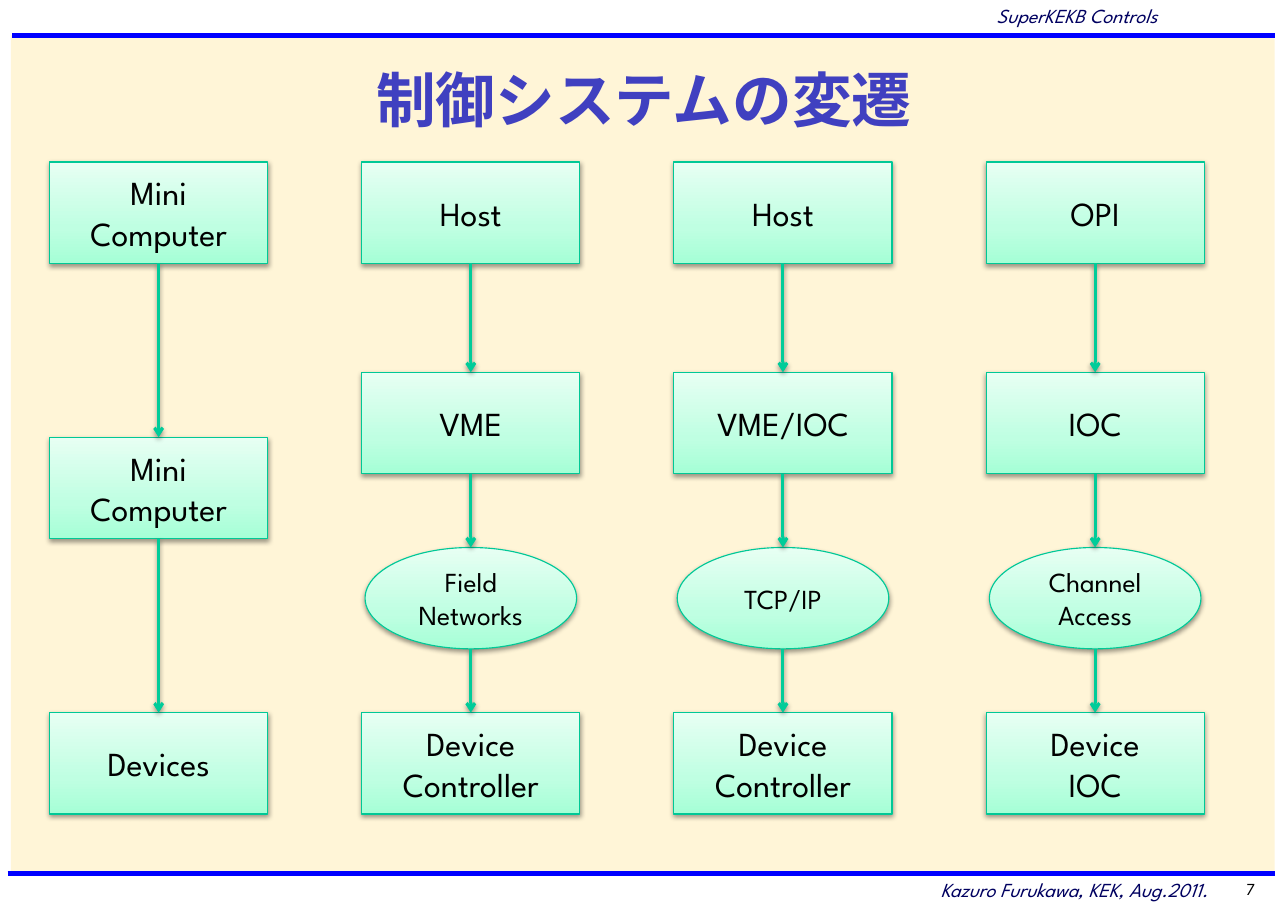
from dataclasses import dataclass
from itertools import pairwise

from pptx import Presentation, oxml
from pptx import util as u
from pptx.dml import color
from pptx.enum import lang, shapes, text
from pptx.oxml import ns


@dataclass(frozen=True)
class Theme:
    face: str = "League Spartan"
    paper: str = "FFF5D7"
    rule: str = "0000FF"
    note: str = "000060"
    title: str = "4040C0"
    ink: str = "000000"
    edge: str = "00C896"
    arrow: str = "00CC99"
    fade: tuple = ((0, "A5FFD6"), (35, "BFFFE2"), (100, "E7FFF3"))
    big: int = 39
    node: int = 22
    oval: int = 18
    small: int = 13
    page: int = 11


T = Theme()
BOX, OVAL = shapes.MSO_SHAPE.RECTANGLE, shapes.MSO_SHAPE.OVAL
LEFT, CENTER, RIGHT = (text.PP_ALIGN.LEFT, text.PP_ALIGN.CENTER,
                       text.PP_ALIGN.RIGHT)
TOP, MID = text.MSO_ANCHOR.TOP, text.MSO_ANCHOR.MIDDLE

# Each column: rows of (top, kind, label)
FLOWS = [
    [(1.47, BOX, "Mini Computer"), (3.97, BOX, "Mini Computer"),
     (6.47, BOX, "Devices")],
] + [
    [(1.47, BOX, host), (3.38, BOX, front), (4.97, OVAL, net),
     (6.47, BOX, end)]
    for host, front, net, end in [
        ("Host", "VME", "Field\nNetworks", "Device Controller"),
        ("Host", "VME/IOC", "TCP/IP", "Device Controller"),
        ("OPI", "IOC", "Channel\nAccess", "Device\nIOC"),
    ]
]


def rgb(code):
    return color.RGBColor.from_string(code)


def inch(*sizes):
    return [u.Inches(size) for size in sizes]


def write(shape, words, size, ink=T.ink, align=CENTER, anchor=MID,
          bold=False, italic=False, tongue=None):
    """Put formatted text into a shape, one paragraph a line."""
    frame = shape.text_frame
    frame.word_wrap = True
    frame.vertical_anchor = anchor
    frame.margin_left = frame.margin_right = u.Inches(0.1)
    frame.margin_top = frame.margin_bottom = u.Inches(0.05)
    frame.text = words
    for para in frame.paragraphs:
        para.alignment = align
        for run in para.runs:
            font = run.font
            font.name, font.size = T.face, u.Pt(size)
            font.bold, font.italic = bold, italic
            font.color.rgb = rgb(ink)
            if tongue:
                font.language_id = tongue


def label(slide, box, words, size, **form):
    write(slide.shapes.add_textbox(*inch(*box)), words, size, **form)


def shade(shape):
    """Add the soft drop shadow."""
    shape.element.spPr.append(oxml.parse_xml(
        f'<a:effectLst {ns.nsdecls("a")}>'
        '<a:outerShdw blurRad="40000" dist="20000" dir="5400000" '
        'rotWithShape="0"><a:srgbClr val="000000"><a:alpha val="38000"/>'
        '</a:srgbClr></a:outerShdw></a:effectLst>'))


def blend(shape):
    """Fill a shape with the theme fade, running upwards."""
    shape.fill.gradient()
    shape.fill.gradient_angle = 90
    stops = "".join(
        f'<a:gs pos="{spot * 1000}"><a:srgbClr val="{code}"/></a:gs>'
        for spot, code in T.fade)
    old = shape.element.spPr.find(".//" + ns.qn("a:gsLst"))
    old.getparent().replace(old, oxml.parse_xml(
        f'<a:gsLst {ns.nsdecls("a")}>{stops}</a:gsLst>'))


def stroke(slide, ends, ink, width):
    line = slide.shapes.add_connector(shapes.MSO_CONNECTOR.STRAIGHT,
                                      *inch(*ends))
    line.line.color.rgb = rgb(ink)
    line.line.width = u.Pt(width)
    return line


def node(slide, box, kind, words):
    shape = slide.shapes.add_shape(kind, *inch(*box))
    blend(shape)
    shape.line.color.rgb = rgb(T.edge)
    shape.line.width = u.Pt(0.75)
    shade(shape)
    write(shape, words, T.oval if kind == OVAL else T.node)
    return shape


def link(slide, start, end):
    """Draw an arrow from the foot of one node to the head of the next."""
    line = stroke(slide, (0, 0, 0, 0), T.arrow, 2)
    line.begin_connect(start, 2)
    line.end_connect(end, 0)
    if start.auto_shape_type == OVAL:  # an ellipse numbers its foot as 4
        line.element.find(".//" + ns.qn("a:stCxn")).set("idx", "4")
    line.element.spPr.find(ns.qn("a:ln")).append(oxml.parse_xml(
        f'<a:tailEnd {ns.nsdecls("a")} type="arrow"/>'))
    shade(line)


def frame(slide, box):
    """Draw the page panel, its rules, and the notes above and below."""
    left, top, width, height = box
    panel = slide.shapes.add_shape(BOX, *inch(*box))
    panel.shadow.inherit = False
    panel.fill.solid()
    panel.fill.fore_color.rgb = rgb(T.paper)
    panel.line.fill.background()
    foot, side = top + height, left + width
    for start, y in ((left + 0.01, top), (left - 0.03, foot - 0.01)):
        rule = stroke(slide, (start, y, side, y), T.rule, 3)
        rule.element.spPr.append(oxml.parse_xml(
            f'<a:effectLst {ns.nsdecls("a")}/>'))
    note = dict(ink=T.note, align=RIGHT, anchor=TOP, italic=True)
    label(slide, (left + 7.75, foot - 0.02, 3.21, 0.33),
          "Kazuro Furukawa, KEK, Aug.2011.", T.small, **note)
    label(slide, (left + 7.75, top - 0.34, 2.75, 0.33),
          "SuperKEKB Controls", T.small, **note)
    label(slide, (side - 0.76, foot - 0.01, 0.68, 0.28), "7", T.page,
          align=RIGHT, anchor=TOP)


def column(slide, box, rows):
    """Stack one chain of nodes in a column and join them."""
    left, top, width, tall = box
    chain = []
    for y, kind, words in rows:
        inset = 0.03 if kind == OVAL else 0
        spot = (left + inset, top + y, width - 2 * inset, tall)
        chain.append(node(slide, spot, kind, words))
    for start, end in pairwise(chain):
        link(slide, start, end)


def main():
    deck = Presentation()
    deck.slide_width, deck.slide_height = inch(11.69, 8.27)
    slide = deck.slides.add_slide(deck.slide_layouts[6])
    frame(slide, (0.1, 0.32, 11.47, 7.62))
    label(slide, (0.18, 0.51, 11.33, 0.78), "制御システムの変遷", T.big,
          ink=T.title, bold=True, tongue=lang.MSO_LANGUAGE_ID.JAPANESE)
    pitch = 8.5 / (len(FLOWS) - 1)
    for i, rows in enumerate(FLOWS):
        column(slide, (0.45 + i * pitch, 0, 1.98, 0.92), rows)
    deck.save("out.pptx")


if __name__ == "__main__":
    main()
